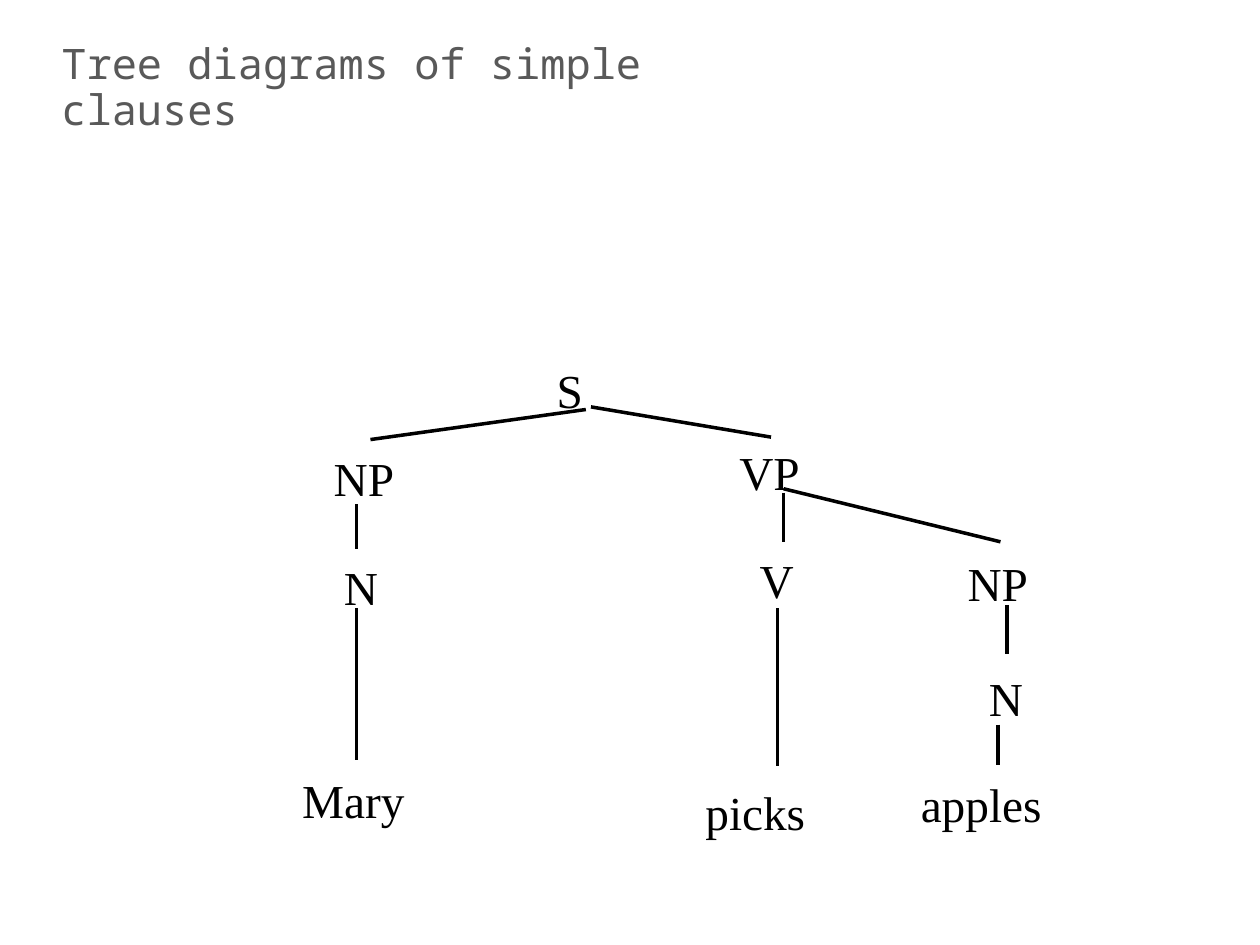
import pptx
import pptx.util
import pptx.dml.color
import pptx.enum.shapes
import pptx.enum.text
import lxml.etree

Pt = pptx.util.Pt
ANCHOR = pptx.enum.text.MSO_ANCHOR
AUTO_SIZE = pptx.enum.text.MSO_AUTO_SIZE
DRAWING = "http://schemas.openxmlformats.org/drawingml/2006/main"

TITLE_FONT = {"name": "Noto Sans Mono", "size": Pt(24)}
NODE_FONT = {"name": "Times New Roman", "size": Pt(27)}
TITLE_FRAME = {"word_wrap": True, "vertical_anchor": ANCHOR.MIDDLE}
NODE_FRAME = {"word_wrap": False, "auto_size": AUTO_SIZE.SHAPE_TO_FIT_TEXT}
NODE_HEIGHT = 39.6

NODES = [
    ("S", 145.4, 0, 29.5),
    ("NP", 18, 50.4, 49),
    ("N", 23.8, 112.3, 33.8),
    ("Mary", 0, 234, 72.7),
    ("VP", 249.8, 46.8, 49),
    ("V", 261.4, 108.7, 33.8),
    ("picks", 230.4, 241.2, 71.3),
    ("NP", 380.2, 110.2, 49),
    ("N", 392.4, 175.7, 33.8),
    ("apples", 353.5, 236.2, 83.5),
]
BRANCHES = [
    (169.2, 31, 46.1, 48.2),
    (172.1, 29.5, 275, 46.8),
    (38.2, 85, 38.2, 110.9),
    (38.2, 144.7, 38.2, 231.1),
    (282.2, 78.5, 282.2, 106.6),
    (278.6, 144.7, 278.6, 234.7),
    (409.7, 142.6, 409.7, 170.6),
    (404.6, 211, 404.6, 234),
    (282.2, 76.3, 406.1, 106.6),
]


def colour(value):
    """Return the colour for a hex string."""
    return pptx.dml.color.RGBColor.from_string(value)


def apply_format(target, values):
    """Set each attribute in a dict of format values."""
    for name, value in values.items():
        setattr(target, name, value)


def add_text(page, box, text, font, ink, frame_format):
    """Add a one-paragraph text box and return its paragraph."""
    frame = page.shapes.add_textbox(*map(Pt, box)).text_frame
    apply_format(frame, frame_format)
    para = frame.paragraphs[0]
    span = para.add_run()
    span.text = text
    apply_format(span.font, font)
    span.font.color.rgb = colour(ink)
    return para


def add_branch(page, ends):
    """Add one straight branch between two points."""
    branch = page.shapes.add_connector(
        pptx.enum.shapes.MSO_CONNECTOR.STRAIGHT, *map(Pt, ends))
    branch.line.width = Pt(2)
    branch.line.color.rgb = colour("000000")
    lxml.etree.SubElement(branch._element.spPr, f"{{{DRAWING}}}effectLst")


def add_title(page, box):
    """Add the slide title inside its box."""
    para = add_text(page, box, "Tree diagrams of simple clauses",
                    TITLE_FONT, "595959", TITLE_FRAME)
    para.line_spacing = 0.9


def add_tree(page, left, top):
    """Add the syntax tree with its corner at left and top."""
    for text, x, y, width in NODES:
        add_text(page, (left + x, top + y, width, NODE_HEIGHT), text,
                 NODE_FONT, "000000", NODE_FRAME)
    for x1, y1, x2, y2 in BRANCHES:
        add_branch(page, (left + x1, top + y1, left + x2, top + y2))


def main():
    """Build the slide and save the deck."""
    deck = pptx.Presentation()
    apply_format(deck, {"slide_width": Pt(720), "slide_height": Pt(540)})
    page = deck.slides.add_slide(deck.slide_layouts[6])
    add_title(page, (28, 13.7, 401, 74.2))
    add_tree(page, 165.6, 203)
    deck.save("out.pptx")


if __name__ == "__main__":
    main()
